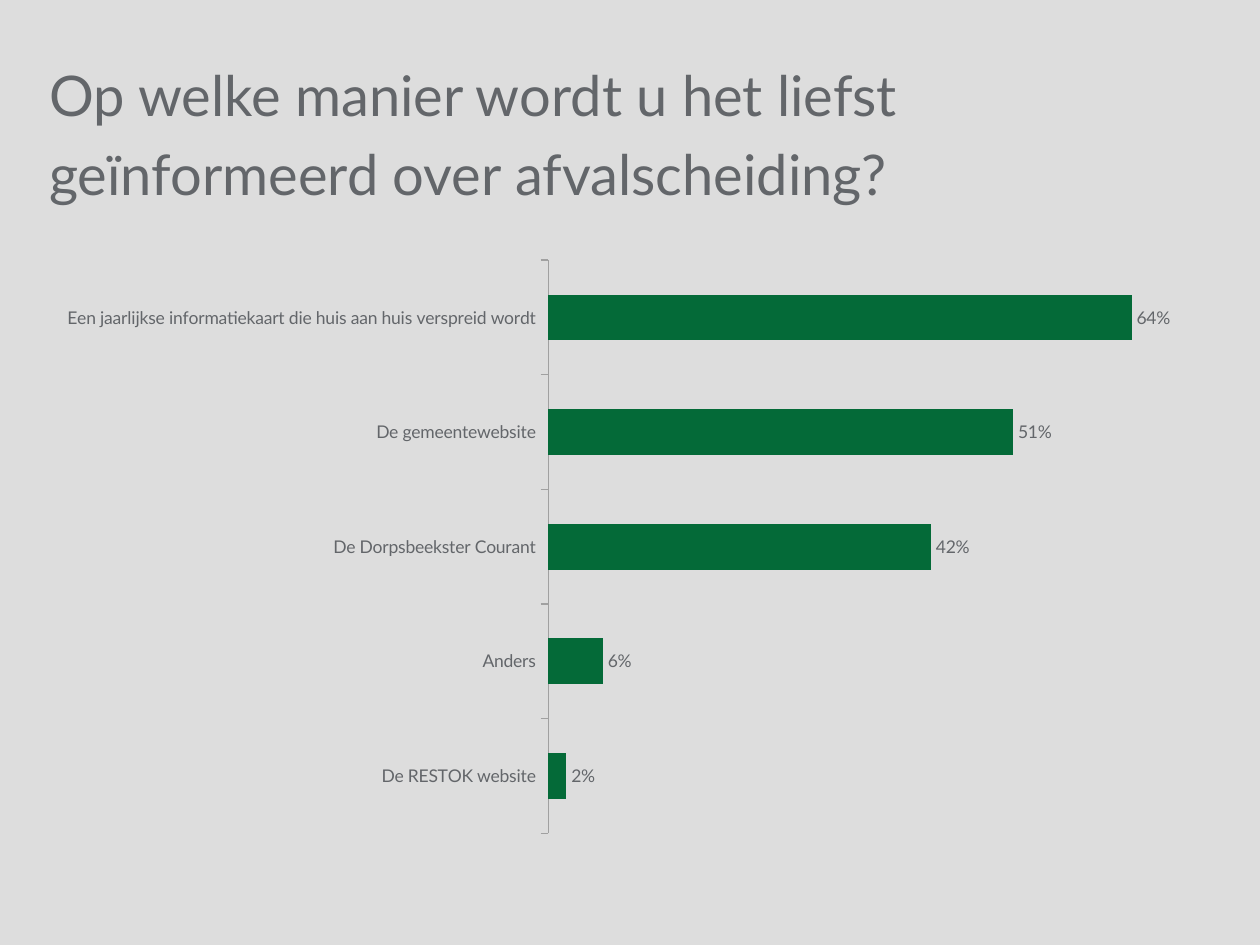
from lxml import etree
from pptx import Presentation
from pptx import util as u
from pptx.chart.data import CategoryChartData
from pptx.dml.color import RGBColor
from pptx.enum import chart as ch
from pptx.enum import text
from pptx.oxml.ns import qn

COLORS = {"background": "DDDDDD", "text": "63666A", "bar": "046A38", "axis": "A0A0A0"}
FONT = "Lato"
LEFT, WIDTH = u.Inches(0.39), u.Inches(9.21)


def set_font(font, size):
    font.name = FONT
    font.size = u.Pt(size)
    font.bold = False
    font.color.rgb = RGBColor.from_string(COLORS["text"])


presentation = Presentation()
presentation.slide_width, presentation.slide_height = u.Inches(10), u.Inches(7.5)
slide = presentation.slides.add_slide(presentation.slide_layouts[5])
slide.background.fill.solid()
slide.background.fill.fore_color.rgb = RGBColor.from_string(COLORS["background"])

# Question
question = slide.shapes.title
question.left, question.top = LEFT, u.Inches(0.39)
question.width, question.height = WIDTH, u.Inches(1.18)
frame = question.text_frame
frame.margin_left = frame.margin_right = frame.margin_top = frame.margin_bottom = 0
frame.word_wrap = True
frame.auto_size = text.MSO_AUTO_SIZE.NONE
frame.vertical_anchor = text.MSO_ANCHOR.TOP
line = frame.paragraphs[0]
line.alignment = text.PP_ALIGN.LEFT
line.line_spacing = u.Pt(45)
run = line.add_run()
run.text = "Op welke manier wordt u het liefst geïnformeerd over afvalscheiding?"
set_font(run.font, 32)

# Answers
answers = {
    "Een jaarlijkse informatiekaart die huis aan huis verspreid wordt": 0.64,
    "De gemeentewebsite": 0.51,
    "De Dorpsbeekster Courant": 0.42,
    "Anders": 0.06,
    "De RESTOK website": 0.02,
}
answer_data = CategoryChartData(number_format="0%")
answer_data.categories = list(answers)
answer_data.add_series("Series 1", list(answers.values()))
chart = slide.shapes.add_chart(
    ch.XL_CHART_TYPE.BAR_CLUSTERED, LEFT, u.Inches(1.97), WIDTH, u.Inches(4.74), answer_data
).chart
chart.has_legend = False
chart.has_title = False
set_font(chart.font, 10)

# Bars and their percentages
plot = chart.plots[0]
plot.gap_width = 150
plot.vary_by_categories = False
bars = plot.series[0]
bars.format.fill.solid()
bars.format.fill.fore_color.rgb = RGBColor.from_string(COLORS["bar"])
plot.has_data_labels = True
percentages = plot.data_labels
percentages.show_value = True
percentages.number_format = "0%"
percentages.number_format_is_linked = False
percentages.position = ch.XL_LABEL_POSITION.OUTSIDE_END
set_font(percentages.font, 10)

# Axes
answer_axis = chart.category_axis
answer_axis.reverse_order = True
answer_axis.has_major_gridlines = False
answer_axis.major_tick_mark = ch.XL_TICK_MARK.OUTSIDE
answer_axis.tick_label_position = ch.XL_TICK_LABEL_POSITION.LOW
answer_axis.format.line.color.rgb = RGBColor.from_string(COLORS["axis"])
answer_axis.format.line.width = u.Pt(0.75)
set_font(answer_axis.tick_labels.font, 10)
share_axis = chart.value_axis
share_axis.minimum_scale, share_axis.maximum_scale = 0, 0.7
share_axis.has_major_gridlines = False
share_axis.visible = False

# Inner plot area, as fractions of the chart
plot_area = plot._element.getparent()
for old_layout in plot_area.findall(qn("c:layout")):
    plot_area.remove(old_layout)
layout = etree.Element(qn("c:layout"))
manual = etree.SubElement(layout, qn("c:manualLayout"))
for tag, value in (("layoutTarget", "inner"), ("xMode", "edge"), ("yMode", "edge"),
                   ("x", "0.43"), ("y", "0.02"), ("w", "0.55"), ("h", "0.96")):
    etree.SubElement(manual, qn("c:" + tag)).set("val", value)
plot_area.insert(0, layout)

presentation.save("out.pptx")
